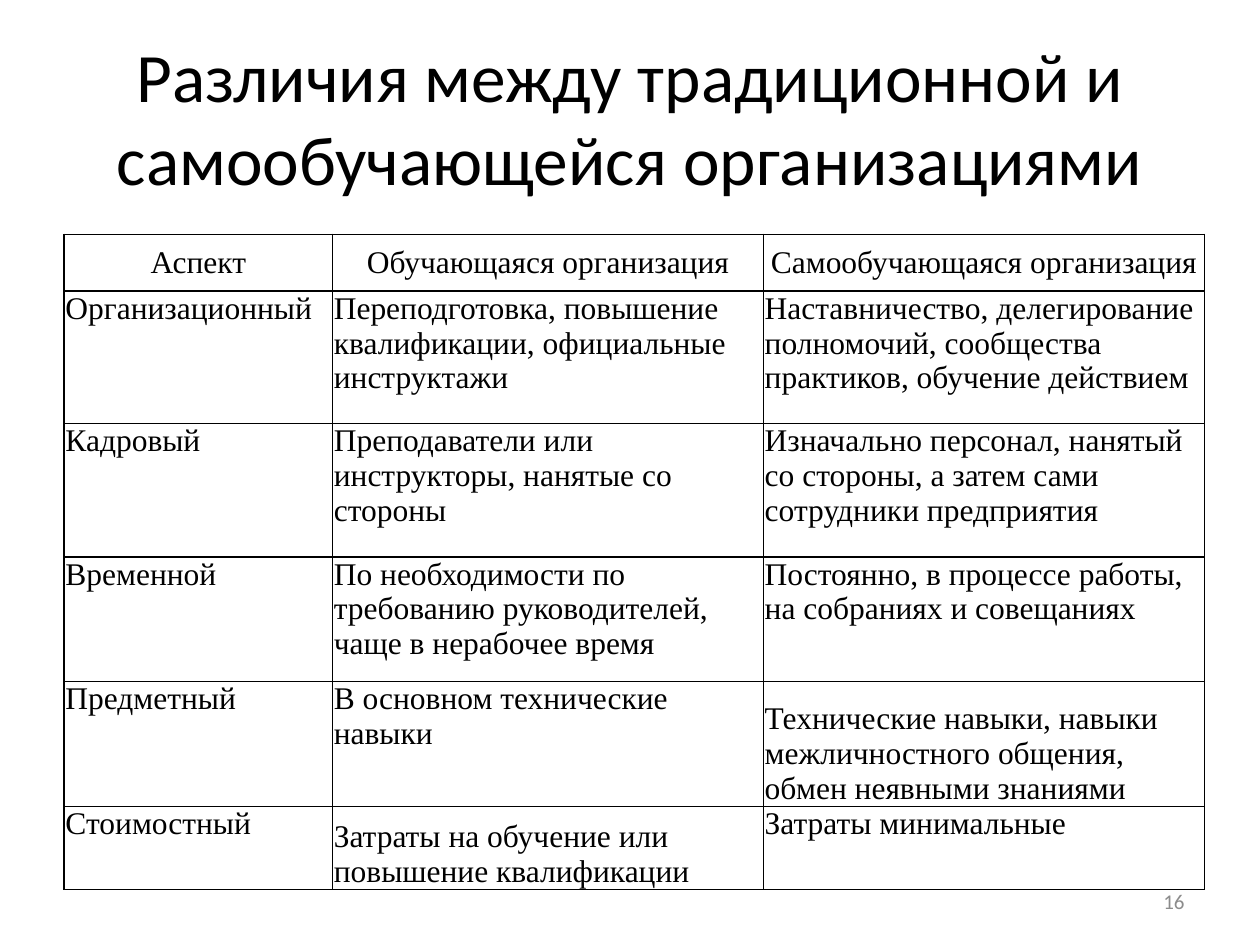
from pptx import Presentation
from pptx.dml.color import RGBColor
from pptx.enum.text import MSO_ANCHOR, PP_ALIGN
from pptx.oxml.ns import qn
from pptx.util import Inches, Pt
from lxml import etree

TOP, MIDDLE, BOTTOM = MSO_ANCHOR.TOP, MSO_ANCHOR.MIDDLE, MSO_ANCHOR.BOTTOM
LEFT, CENTER, RIGHT = PP_ALIGN.LEFT, PP_ALIGN.CENTER, PP_ALIGN.RIGHT

# Content
TITLE = "Различия между традиционной и самообучающейся организациями"
PAGE_NUMBER = "16"
ROWS = [
    ("Аспект", "Обучающаяся организация", "Самообучающаяся организация"),
    ("Организационный",
     "Переподготовка, повышение квалификации, официальные инструктажи",
     "Наставничество, делегирование полномочий, сообщества практиков, обучение действием"),
    ("Кадровый",
     "Преподаватели или инструкторы, нанятые со стороны",
     "Изначально персонал, нанятый со стороны, а затем сами сотрудники предприятия"),
    ("Временной",
     "По необходимости по требованию руководителей, чаще в нерабочее время",
     "Постоянно, в процессе работы, на собраниях и совещаниях"),
    ("Предметный",
     "В основном технические навыки",
     "Технические навыки, навыки межличностного общения, обмен неявными знаниями"),
    ("Стоимостный",
     "Затраты на обучение или повышение квалификации",
     "Затраты минимальные"),
]
BOTTOM_CELLS = {(4, 2), (5, 1)}
COL_WIDTHS = [2.13, 3.42, 3.5]
ROW_HEIGHTS = [0.45, 1.05, 1.06, 0.99, 0.99, 0.66]

THEME = {
    "title": ("Calibri", 39.6, RGBColor(0, 0, 0)),
    "table": ("Times New Roman", 18, RGBColor(0, 0, 0)),
    "number": ("Calibri", 12, RGBColor(0x8C, 0x8C, 0x8C)),
    "cell": RGBColor(0xFF, 0xFF, 0xFF),
    "border": "000000",
    "border_width": Pt(1),
}


def write(tf, text, style, align):
    tf.text = text
    p = tf.paragraphs[0]
    p.alignment = align
    font = p.runs[0].font
    font.name, size, font.color.rgb = THEME[style]
    font.size = Pt(size)


def add_text(s, box, text, style, align):
    sp = s.shapes.add_textbox(*map(Inches, box))
    tf = sp.text_frame
    tf.word_wrap = True
    tf.vertical_anchor = MIDDLE
    write(tf, text, style, align)


def add_borders(cell):
    tc_pr = cell._tc.get_or_add_tcPr()
    for i, side in enumerate(("a:lnL", "a:lnR", "a:lnT", "a:lnB")):
        ln = etree.Element(qn(side), w=str(THEME["border_width"]))
        fill = etree.SubElement(ln, qn("a:solidFill"))
        etree.SubElement(fill, qn("a:srgbClr"), val=THEME["border"])
        tc_pr.insert(i, ln)


def add_comparison(s):
    size = sum(COL_WIDTHS), sum(ROW_HEIGHTS)
    frame = s.shapes.add_table(len(ROWS), len(COL_WIDTHS),
                               *map(Inches, (0.51, 1.86, *size)))
    table = frame.table
    table.first_row = table.horz_banding = False
    for col, width in zip(table.columns, COL_WIDTHS):
        col.width = Inches(width)
    for row, height in zip(table.rows, ROW_HEIGHTS):
        row.height = Inches(height)

    for r, texts in enumerate(ROWS):
        for c, text in enumerate(texts):
            cell = table.cell(r, c)
            cell.margin_left = cell.margin_right = Inches(0.01)
            cell.margin_top = cell.margin_bottom = 0
            if r == 0:
                cell.vertical_anchor = MIDDLE
            else:
                cell.vertical_anchor = BOTTOM if (r, c) in BOTTOM_CELLS else TOP
            cell.fill.solid()
            cell.fill.fore_color.rgb = THEME["cell"]
            add_borders(cell)
            write(cell.text_frame, text, "table", CENTER if r == 0 else LEFT)


def main():
    prs = Presentation()
    prs.slide_width, prs.slide_height = Inches(10), Inches(7.5)
    s = prs.slides.add_slide(prs.slide_layouts[6])

    # Title, comparison table, page number
    add_text(s, (0.5, 0.3, 9, 1.25), TITLE, "title", CENTER)
    add_comparison(s)
    add_text(s, (7.17, 6.95, 2.33, 0.4), PAGE_NUMBER, "number", RIGHT)

    prs.save("out.pptx")


if __name__ == "__main__":
    main()
